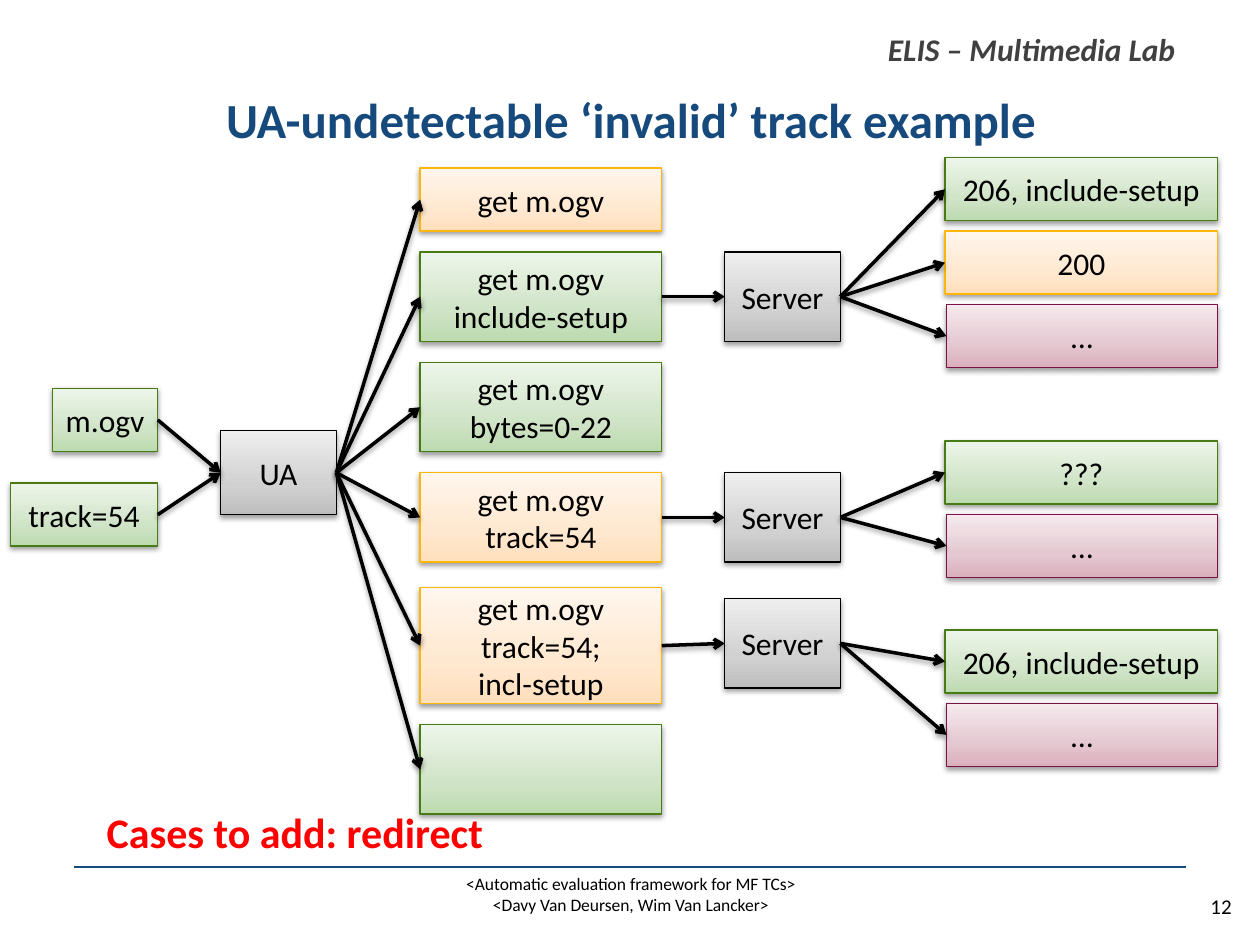
"""Build the slide on the UA-undetectable invalid track example."""
from copy import deepcopy
from pptx import Presentation, util as u
from pptx.dml.color import RGBColor
from pptx.enum import shapes, text
from pptx.oxml import parse_xml
from pptx.oxml.ns import nsdecls, qn

BLACK = RGBColor(0x00, 0x00, 0x00)
NAVY = RGBColor(0x16, 0x4A, 0x7C)
GREY = RGBColor(0x40, 0x40, 0x40)
RED = RGBColor(0xFF, 0x00, 0x00)
GREEN_BOX = (RGBColor(0x48, 0x7B, 0x13), RGBColor(0xBC, 0xDA, 0xAF),
             RGBColor(0xD0, 0xE4, 0xC7), RGBColor(0xED, 0xF5, 0xEA))
ORANGE_BOX = (RGBColor(0xFD, 0xB6, 0x0C), RGBColor(0xFF, 0xDF, 0xBC),
              RGBColor(0xFF, 0xE8, 0xD0), RGBColor(0xFF, 0xF6, 0xED))
PINK_BOX = (RGBColor(0x7B, 0x13, 0x48), RGBColor(0xDA, 0xAF, 0xBC),
            RGBColor(0xE4, 0xC7, 0xD0), RGBColor(0xF5, 0xEA, 0xED))
GREY_BOX = (BLACK, RGBColor(0xBD, 0xBD, 0xBD),
            RGBColor(0xD1, 0xD1, 0xD1), RGBColor(0xEE, 0xEE, 0xEE))
SHADOW = (f'<a:effectLst {nsdecls("a")}><a:outerShdw blurRad="40000" dist="20000" '
          'dir="5400000" rotWithShape="0"><a:srgbClr val="000000">'
          '<a:alpha val="38000"/></a:srgbClr></a:outerShdw></a:effectLst>')


def write(tf, lines, size, color=BLACK, align=text.PP_ALIGN.CENTER, bold=None, italic=None):
    for i, line in enumerate(lines):
        p = tf.add_paragraph() if i else tf.paragraphs[0]
        p.alignment = align
        r = p.add_run()
        r.text = line
        r.font.name, r.font.size = "Calibri", u.Pt(size)
        r.font.bold, r.font.italic = bold, italic
        r.font.color.rgb = color


def add_box(x, y, w, h, lines, palette):
    sp = s.shapes.add_shape(shapes.MSO_SHAPE.RECTANGLE, u.Cm(x), u.Cm(y), u.Cm(w), u.Cm(h))
    sp.fill.gradient()
    sp.fill.gradient_angle = 90
    gs = sp._element.spPr.find(".//" + qn("a:gs"))
    gs.addnext(deepcopy(gs))
    for stop, position, color in zip(sp.fill.gradient_stops, (0, 0.35, 1), palette[1:]):
        stop.position, stop.color.rgb = position, color
    sp.line.color.rgb, sp.line.width = palette[0], u.Pt(0.75)
    sp._element.spPr.append(parse_xml(SHADOW))
    sp.text_frame.vertical_anchor = text.MSO_ANCHOR.MIDDLE
    write(sp.text_frame, lines, 18)
    return sp


prs = Presentation()
prs.slide_width, prs.slide_height = u.Cm(25.4), u.Cm(19.05)
s = prs.slides.add_slide(prs.slide_layouts[5])

title = s.shapes.title
title.left, title.top, title.width, title.height = u.Cm(1.4), u.Cm(1.47), u.Cm(22.63), u.Cm(1.85)
title.text_frame.vertical_anchor = text.MSO_ANCHOR.MIDDLE
write(title.text_frame, ["UA-undetectable ‘invalid’ track example"], 28, NAVY, bold=True)

CENTER, LEFT, JUSTIFY = text.PP_ALIGN.CENTER, text.PP_ALIGN.LEFT, text.PP_ALIGN.JUSTIFY
for x, y, w, h, wrap, lines, style in (
    (23.83, 17.88, 1.57, 0.76, True, ["12"], (12, BLACK, CENTER)),
    (17.65, 0.48, 6.35, 1.02, False, ["ELIS – Multimedia Lab"], (18, GREY, JUSTIFY, True, True)),
    (1.5, 17.48, 22.43, 1.55, True, ["<Automatic evaluation framework for MF TCs>",
                                     "<Davy Van Deursen, Wim Van Lancker>"], (10, BLACK, CENTER)),
    (1.9, 16.13, 19.58, 1.27, True, ["Cases to add: redirect"], (24, RED, LEFT, True)),
):
    tf = s.shapes.add_textbox(u.Cm(x), u.Cm(y), u.Cm(w), u.Cm(h)).text_frame
    tf.word_wrap = wrap
    write(tf, lines, *style)

rule = s.shapes.add_connector(shapes.MSO_CONNECTOR.STRAIGHT,
                              u.Cm(1.5), u.Cm(17.48), u.Cm(23.9), u.Cm(17.48))
rule.line.color.rgb, rule.line.width = NAVY, u.Pt(1.5)
rule._element.spPr.append(parse_xml(f'<a:effectLst {nsdecls("a")}/>'))

ua = add_box(4.45, 8.68, 2.33, 1.7, ["UA"], GREY_BOX)
links = [(add_box(1.06, 7.83, 2.12, 1.27, ["m.ogv"], GREEN_BOX), ua),
         (add_box(0.21, 9.74, 2.97, 1.27, ["track=54"], GREEN_BOX), ua)]

partial = ("206, include-setup", GREEN_BOX)
other = ("…", PINK_BOX)
for y, h, lines, palette, server_y, response_y, responses in (
    (3.39, 1.27, ["get m.ogv"], ORANGE_BOX, 0, 0, []),
    (5.08, 1.8, ["get m.ogv", "include-setup"], GREEN_BOX,
     5.08, 3.18, [partial, ("200", ORANGE_BOX), other]),
    (7.31, 1.8, ["get m.ogv", "bytes=0-22"], GREEN_BOX, 0, 0, []),
    (9.53, 1.8, ["get m.ogv", "track=54"], ORANGE_BOX,
     9.53, 8.89, [("???", GREEN_BOX), other]),
    (11.85, 2.33, ["get m.ogv", "track=54;", "incl-setup"], ORANGE_BOX,
     12.07, 12.7, [partial, other]),
    (14.61, 1.8, [], GREEN_BOX, 0, 0, []),
):
    request = add_box(8.47, y, 4.87, h, lines, palette)
    links.append((ua, request))
    if responses:
        server = add_box(14.61, server_y, 2.33, 1.8, ["Server"], GREY_BOX)
        links.append((request, server))
    for i, (label, color) in enumerate(responses):
        x = 19.08 if color is PINK_BOX else 19.05
        links.append((server, add_box(x, response_y + 1.48 * i, 24.55 - x, 1.27, [label], color)))

for source, target in links:
    arrow = s.shapes.add_connector(shapes.MSO_CONNECTOR.STRAIGHT, 0, 0, 0, 0)
    arrow.begin_connect(source, 3)
    arrow.end_connect(target, 1)
    arrow.line.color.rgb, arrow.line.width = BLACK, u.Pt(2)
    arrow.line._get_or_add_ln().append(parse_xml(f'<a:tailEnd {nsdecls("a")} type="arrow"/>'))
    arrow._element.spPr.append(parse_xml(SHADOW))

prs.save("out.pptx")
